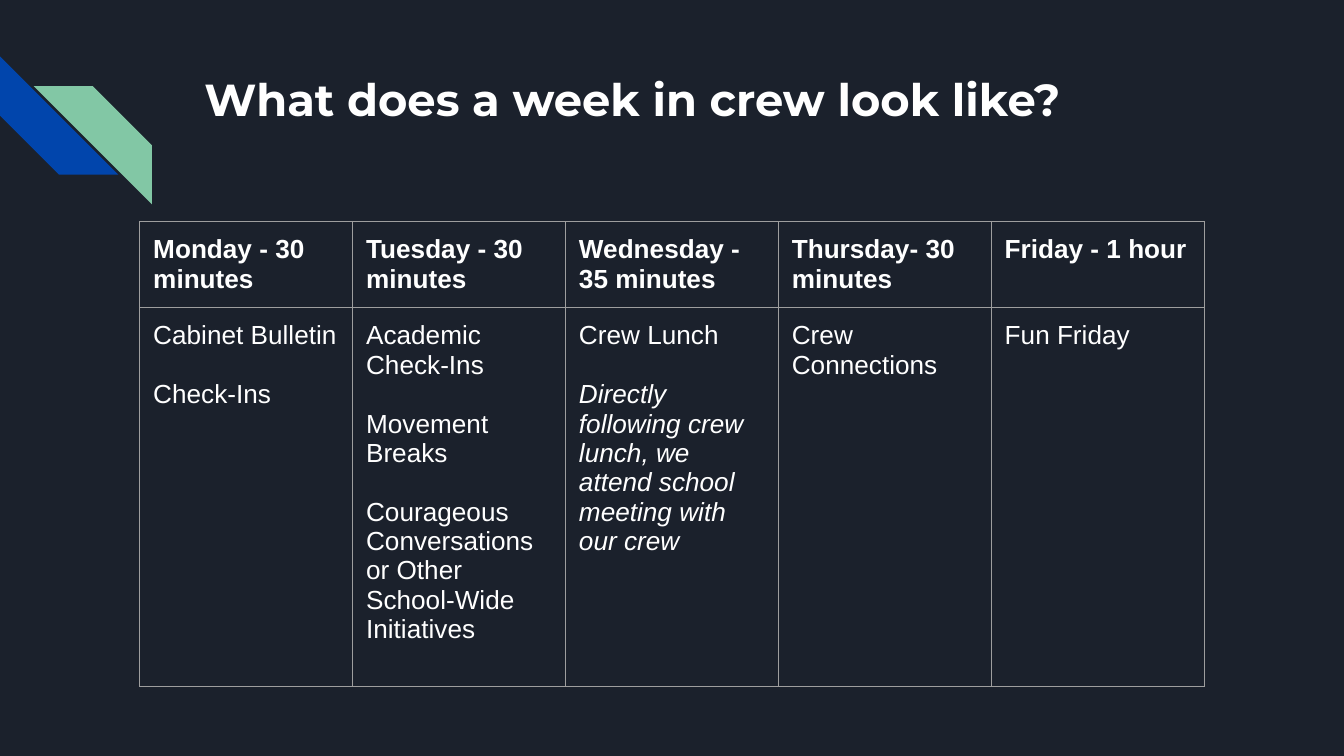
import pptx
import pptx.dml.color
import pptx.enum.shapes
import pptx.enum.text
import pptx.oxml.ns
import pptx.util
from lxml import etree
from pptx.util import Inches

COLORS = {
    "background": "1B212C",
    "blue": "0145AC",
    "green": "82C7A5",
    "text": "FFFFFF",
    "border": "9E9E9E",
}

WEEK = [
    ("Monday - 30 minutes", ["Cabinet Bulletin", "Check-Ins"]),
    ("Tuesday - 30 minutes", [
        "Academic Check-Ins",
        "Movement Breaks",
        "Courageous Conversations or Other School-Wide Initiatives",
    ]),
    ("Wednesday - 35 minutes", [
        "Crew Lunch",
        "Directly following crew lunch, we attend school meeting with our crew",
    ]),
    ("Thursday- 30 minutes", ["Crew Connections"]),
    ("Friday - 1 hour", ["Fun Friday"]),
]
ITALIC_ITEMS = {WEEK[2][1][1]}


def rgb(name):
    return pptx.dml.color.RGBColor.from_string(COLORS[name])


def add_span(para, text, font, size, bold=False, italic=False):
    span = para.add_run()
    span.text = text
    span.font.name = font
    span.font.size = pptx.util.Pt(size)
    span.font.bold = bold
    span.font.italic = italic
    span.font.color.rgb = rgb("text")


def set_margins(box):
    box.margin_left = box.margin_right = Inches(0.1)
    box.margin_top = box.margin_bottom = Inches(0.1)


def add_stripe(page, left, top, color):
    stripe = page.shapes.add_shape(
        pptx.enum.shapes.MSO_SHAPE.DIAGONAL_STRIPE,
        Inches(left), Inches(top), Inches(0.88), Inches(0.88))
    stripe.adjustments[0] = 0.5
    stripe.shadow.inherit = False
    stripe.fill.solid()
    stripe.fill.fore_color.rgb = rgb(color)
    stripe.line.fill.background()
    return stripe


def set_title(page, text):
    title = page.shapes.title
    title.left, title.top = Inches(1.42), Inches(0.43)
    title.width, title.height = Inches(7.7), Inches(1)
    frame = title.text_frame
    set_margins(frame)
    frame.word_wrap = True
    frame.auto_size = pptx.enum.text.MSO_AUTO_SIZE.NONE
    frame.vertical_anchor = pptx.enum.text.MSO_ANCHOR.TOP
    para = frame.paragraphs[0]
    para.alignment = pptx.enum.text.PP_ALIGN.LEFT
    add_span(para, text, "Montserrat", 24, bold=True)


def add_borders(cell):
    qn = pptx.oxml.ns.qn
    properties = cell._tc.get_or_add_tcPr()
    for side in ("a:lnL", "a:lnR", "a:lnT", "a:lnB"):
        line = etree.SubElement(properties, qn(side), w=str(pptx.util.Pt(0.75)))
        fill = etree.SubElement(line, qn("a:solidFill"))
        etree.SubElement(fill, qn("a:srgbClr"), val=COLORS["border"])


def fill_cell(cell, items, bold=False):
    set_margins(cell)
    add_borders(cell)
    cell.fill.background()
    frame = cell.text_frame
    for index, item in enumerate(items):
        para = frame.add_paragraph() if index else frame.paragraphs[0]
        if index:
            para.space_before = pptx.util.Pt(15.75)
        add_span(para, item, "Arial", 14, bold, item in ITALIC_ITEMS)


def add_schedule(page):
    width, row_heights = Inches(7.92), (0.64, 2.82)
    table = page.shapes.add_table(
        len(row_heights), len(WEEK), Inches(1.04), Inches(1.65),
        width, Inches(sum(row_heights))).table
    table.first_row = False
    table.horz_banding = False
    for row, height in zip(table.rows, row_heights):
        row.height = Inches(height)
    for number, (day, activities) in enumerate(WEEK):
        table.columns[number].width = width // len(WEEK)
        fill_cell(table.cell(0, number), [day], bold=True)
        fill_cell(table.cell(1, number), activities)


def main():
    deck = pptx.Presentation()
    deck.slide_width = Inches(10)
    deck.slide_height = deck.slide_width * 9 // 16
    page = deck.slides.add_slide(deck.slide_layouts[5])
    page.background.fill.solid()
    page.background.fill.fore_color.rgb = rgb("background")
    add_stripe(page, 0, 0.42, "blue").rotation = 270
    green_stripe = add_stripe(page, 0.25, 0.64, "green")
    green_stripe._element.spPr.xfrm.set("flipH", "1")
    set_title(page, "What does a week in crew look like?")
    add_schedule(page)
    deck.save("out.pptx")


if __name__ == "__main__":
    main()
